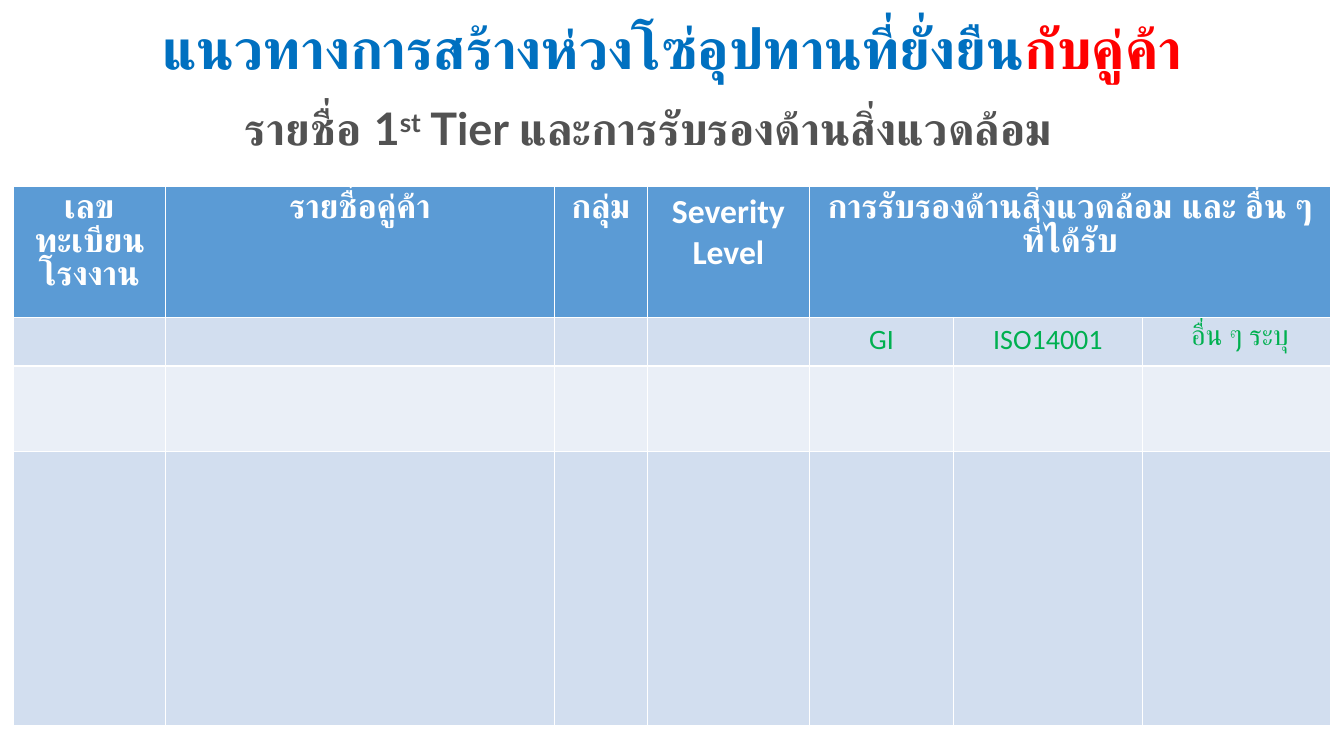
from pptx import Presentation
from pptx.dml.color import RGBColor
from pptx.enum.text import MSO_ANCHOR, PP_ALIGN
from pptx.util import Inches, Pt

CENTER = PP_ALIGN.CENTER
TOP, MIDDLE = MSO_ANCHOR.TOP, MSO_ANCHOR.MIDDLE
HEX = {
    "blue": "0070C0", "red": "FF0000", "gray": "525252", "white": "FFFFFF",
    "green": "00B050", "head": "5B9BD5", "dark": "D2DEEF", "light": "EAEFF7",
}


def add_run(para, text, font, size, color, bold=True):
    para.alignment = CENTER
    run = para.add_run()
    run.text = text
    run.font.name, run.font.size, run.font.bold = font, Pt(size), bold
    run.font.color.rgb = RGBColor.from_string(HEX[color])
    return run


def add_line(left, top, width, height, anchor):
    """Add a one-line text box and return its paragraph."""
    box = slide.shapes.add_textbox(*map(Inches, (left, top, width, height)))
    frame = box.text_frame
    frame.word_wrap = True
    frame.vertical_anchor = anchor
    para = frame.paragraphs[0]
    para.line_spacing = 0.9
    return para


deck = Presentation()
deck.slide_width, deck.slide_height = Inches(13.33), Inches(7.5)
slide = deck.slides.add_slide(deck.slide_layouts[6])

# Headings
edge, wide = 0.13, 13.07
title = add_line(edge, 0, wide, 1.01, MIDDLE)
add_run(title, "แนวทางการสร้างห่วงโซ่อุปทานที่ยั่งยืน", "Lato", 40, "blue")
add_run(title, "กับคู่ค้า", "Lato", 40, "red")

sub = add_line(2.09, 1.01, 8.68, 0.51, TOP)
add_run(sub, "รายชื่อ 1", "Lato", 32, "gray")
power = add_run(sub, "st", "Lato", 32, "gray")
power.font._element.set("baseline", "30000")
add_run(sub, " Tier และการรับรองด้านสิ่งแวดล้อม", "Lato", 32, "gray")

# Supplier table
cols = [1.51, 3.86, 0.92, 1.61, 1.43, 1.87, 1.87]
rows = [0.91, 0.48, 0.85, 2.72]
fills = ["head", "dark", "light", "dark"]
heads = ["เลขทะเบียนโรงงาน", "รายชื่อคู่ค้า", "กลุ่ม", "Severity Level",
         "การรับรองด้านสิ่งแวดล้อม และ อื่น ๆ ที่ได้รับ"]
certs = ["GI", "ISO14001", " อื่น ๆ ระบุ"]
first = len(cols) - len(certs)

table = slide.shapes.add_table(
    len(rows), len(cols), Inches(edge), Inches(1.85),
    Inches(wide), Inches(sum(rows))).table
for col, width in zip(table.columns, cols):
    col.width = Inches(width)
for r, (height, fill) in enumerate(zip(rows, fills)):
    table.rows[r].height = Inches(height)
    for c in range(len(cols)):
        cell = table.cell(r, c)
        cell.fill.solid()
        cell.fill.fore_color.rgb = RGBColor.from_string(HEX[fill])
table.cell(0, first).merge(table.cell(0, len(cols) - 1))

for c, text in enumerate(heads):
    para = table.cell(0, c).text_frame.paragraphs[0]
    add_run(para, text, "Calibri", 24, "white")
for c, text in enumerate(certs, first):
    para = table.cell(1, c).text_frame.paragraphs[0]
    add_run(para, text, "Calibri", 20, "green", False)

deck.save("out.pptx")
